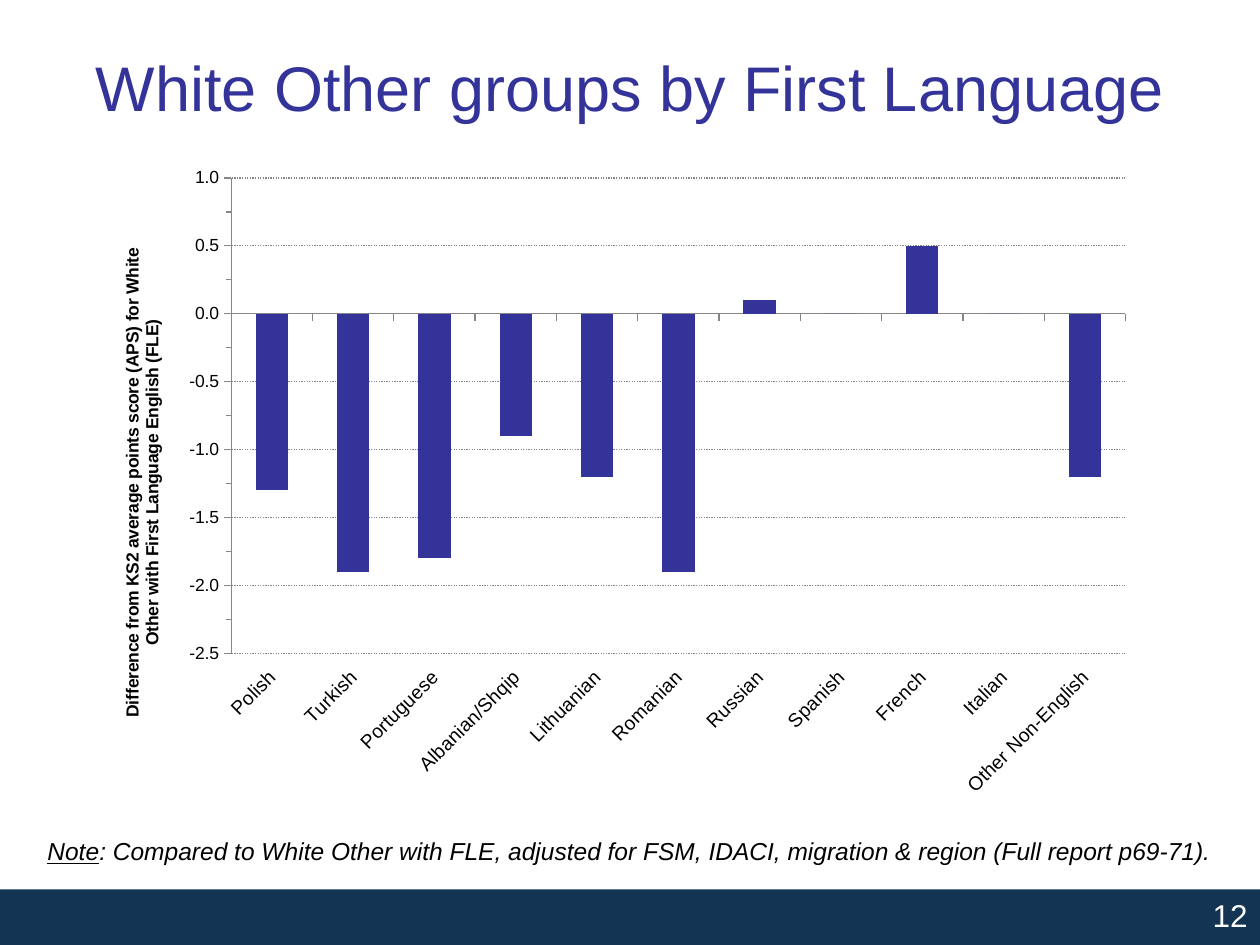
from pptx import Presentation
from pptx.chart.data import CategoryChartData
from pptx.dml.color import RGBColor
from pptx.enum.chart import XL_CHART_TYPE as ChartType, XL_TICK_LABEL_POSITION as LabelPos, XL_TICK_MARK as Tick
from pptx.enum.dml import MSO_LINE as Dash
from pptx.enum.shapes import MSO_SHAPE as Shape
from pptx.enum.text import MSO_ANCHOR as Anchor, PP_ALIGN as Align
from pptx.oxml import parse_xml
from pptx.oxml.ns import nsdecls, qn
from pptx.util import Pt

FONT = "Arial"
COLORS = {"indigo": "333399", "navy": "133452", "white": "FFFFFF",
          "black": "000000", "grey": "868686"}
SCORES = {
    "Polish": -1.3, "Turkish": -1.9, "Portuguese": -1.8,
    "Albanian/Shqip": -0.9, "Lithuanian": -1.2, "Romanian": -1.9,
    "Russian": 0.1, "Spanish": 0.0, "French": 0.5, "Italian": 0.0,
    "Other Non-English": -1.2,
}
AXIS_TITLE = ("Difference from KS2 average points score (APS) for White "
              "Other with First Language English (FLE)")


def color(name):
    return RGBColor.from_string(COLORS[name])


def style_font(font, size, tone="black", bold=False, italic=False, underline=False):
    font.name, font.size = FONT, Pt(size)
    font.bold, font.italic, font.underline = bold, italic, underline
    font.color.rgb = color(tone)


def write(paragraph, text, **style):
    run = paragraph.add_run()
    run.text = text
    style_font(run.font, **style)


def add_text_box(slide, box, align=Align.LEFT, anchor=Anchor.TOP):
    frame = slide.shapes.add_textbox(*map(Pt, box)).text_frame
    frame.word_wrap = True
    frame.vertical_anchor = anchor
    frame.paragraphs[0].alignment = align
    return frame.paragraphs[0]


def add_footer(slide, number):
    footer = slide.shapes.add_shape(Shape.RECTANGLE, *map(Pt, (0, 508.3, 720, 31.7)))
    footer.shadow.inherit = False
    footer.fill.solid()
    footer.fill.fore_color.rgb = color("navy")
    footer.line.fill.background()
    footer.text_frame.vertical_anchor = Anchor.TOP
    paragraph = footer.text_frame.paragraphs[0]
    paragraph.alignment = Align.RIGHT
    write(paragraph, number, size=18, tone="white")


def place(element, index, target="", **fractions):
    for old in element.findall(qn("c:layout")):
        element.remove(old)
    modes = '<c:xMode val="edge"/><c:yMode val="edge"/>'
    values = "".join(f'<c:{key} val="{value}"/>' for key, value in fractions.items())
    element.insert(index, parse_xml(
        f'<c:layout {nsdecls("c")}><c:manualLayout>{target}{modes}{values}'
        '</c:manualLayout></c:layout>'))


def style_line(line, dash=None):
    line.color.rgb = color("grey")
    line.width = Pt(0.75)
    if dash:
        line.dash_style = dash


def style_value_axis(axis):
    axis.minimum_scale, axis.maximum_scale = -2.5, 1
    axis.major_unit, axis.minor_unit = 0.5, 0.25
    axis.major_tick_mark = axis.minor_tick_mark = Tick.OUTSIDE
    axis.tick_labels.number_format = "###0.0"
    axis.tick_labels.number_format_is_linked = False
    style_font(axis.tick_labels.font, size=10)
    style_line(axis.format.line)
    style_line(axis.major_gridlines.format.line, Dash.ROUND_DOT)
    write(axis.axis_title.text_frame.paragraphs[0], AXIS_TITLE, size=10, bold=True)
    title = axis.axis_title._element
    title.find(".//" + qn("a:bodyPr")).set("rot", "-5400000")
    place(title, 1, x=0.022, y=0.137)


def style_category_axis(axis):
    axis.tick_label_position = LabelPos.LOW
    axis.major_tick_mark = Tick.OUTSIDE
    axis.has_major_gridlines = False
    style_font(axis.tick_labels.font, size=11)
    style_line(axis.format.line)
    axis._element.find(".//" + qn("a:bodyPr")).set("rot", "-2700000")


def add_score_chart(slide, box):
    scores = CategoryChartData()
    scores.categories = list(SCORES)
    scores.add_series("Series 1", list(SCORES.values()))
    chart = slide.shapes.add_chart(
        ChartType.COLUMN_CLUSTERED, *map(Pt, box), scores).chart
    chart.has_legend = chart.has_title = False
    style_font(chart.font, size=10)
    plot = chart.plots[0]
    plot.gap_width = 150
    plot.vary_by_categories = False
    bars = plot.series[0]
    bars.invert_if_negative = False
    bars.format.fill.solid()
    bars.format.fill.fore_color.rgb = color("indigo")
    style_value_axis(chart.value_axis)
    style_category_axis(chart.category_axis)
    place(chart._chartSpace.find(".//" + qn("c:plotArea")), 0,
          '<c:layoutTarget val="inner"/>', x=0.13, y=0.035, w=0.85, h=0.726)


def main():
    deck = Presentation()
    deck.slide_width, deck.slide_height = Pt(720), Pt(540)
    slide = deck.slides.add_slide(deck.slide_layouts[6])
    add_footer(slide, "12")
    heading = add_text_box(slide, (36, 21.6, 648, 55.4), Align.CENTER, Anchor.MIDDLE)
    write(heading, "White Other groups by First Language", size=36, tone="indigo")
    add_score_chart(slide, (54, 88.6, 601.2, 374.4))
    note = add_text_box(slide, (20, 474.3, 700, 24.5))
    write(note, "Note", size=14, italic=True, underline=True)
    write(note, ": Compared to White Other with FLE, adjusted for FSM, IDACI, "
          "migration & region (Full report p69-71).", size=14, italic=True)
    deck.save("out.pptx")


if __name__ == "__main__":
    main()
